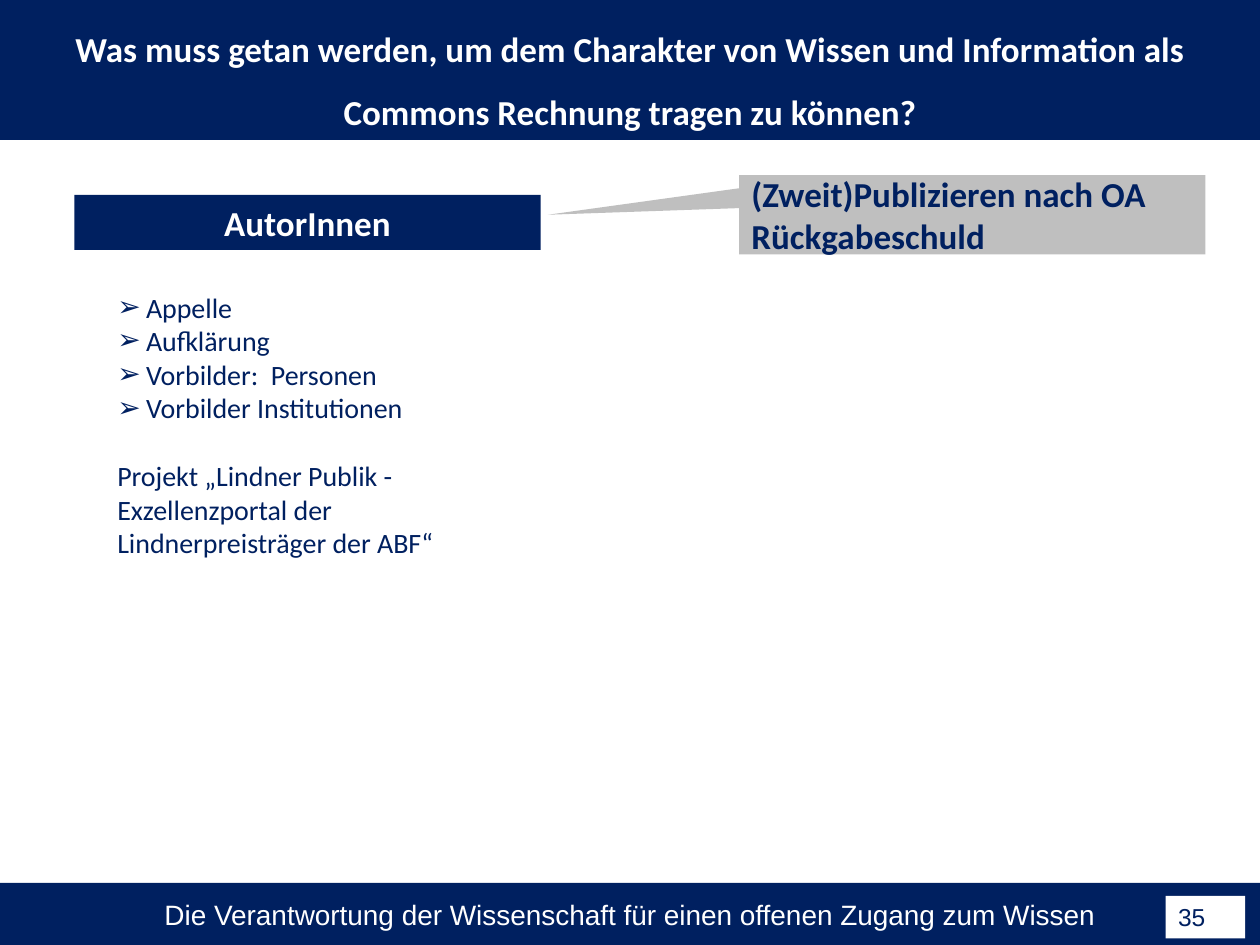
from dataclasses import dataclass

import pptx
import pptx.dml.color
import pptx.enum.shapes
import pptx.enum.text
import pptx.oxml
import pptx.oxml.ns
import pptx.util

Cm, Pt = pptx.util.Cm, pptx.util.Pt
Kind = pptx.enum.shapes.MSO_SHAPE
Align = pptx.enum.text.PP_ALIGN
Anchor = pptx.enum.text.MSO_ANCHOR

NAVY, WHITE, GREY = "002060", "FFFFFF", "BFBFBF"
WIDE, HIGH = 25.4, 19.05


@dataclass
class Style:
    size: int
    color: str
    font: str = "Calibri"
    bold: bool = False


@dataclass
class Box:
    lines: list[str]
    left: float
    top: float
    width: float
    height: float
    fill: str
    style: Style
    align: Align = Align.LEFT
    kind: Kind = Kind.RECTANGLE
    inset: float = 0.25
    tip: tuple[float, ...] = ()


def paint(form, tone: str) -> None:
    """Give a fill or a font one solid colour."""
    color = pptx.dml.color.RGBColor.from_string(tone)
    if hasattr(form, "solid"):
        form.solid()
        form.fore_color.rgb = color
    else:
        form.color.rgb = color


def place(shape, left: float, top: float, width: float, height: float) -> None:
    shape.left, shape.top = Cm(left), Cm(top)
    shape.width, shape.height = Cm(width), Cm(height)


def write(frame, lines: list[str], style: Style, align: Align) -> None:
    """Write one paragraph with one run for each line."""
    frame.word_wrap = True
    frame.auto_size = pptx.enum.text.MSO_AUTO_SIZE.NONE
    for i, line in enumerate(lines):
        para = frame.paragraphs[0] if i == 0 else frame.add_paragraph()
        para.alignment = align
        para.space_before = Pt(0)
        run = para.add_run()
        run.text = line
        run.font.name, run.font.size = style.font, Pt(style.size)
        run.font.bold = style.bold
        paint(run.font, style.color)


def draw(slide, box: Box) -> None:
    shape = slide.shapes.add_shape(box.kind, 0, 0, 0, 0)
    place(shape, box.left, box.top, box.width, box.height)
    shape.shadow.inherit = False
    paint(shape.fill, box.fill)
    shape.line.fill.background()
    for i, value in enumerate(box.tip):
        shape.adjustments[i] = value
    frame = shape.text_frame
    frame.margin_left = frame.margin_right = Cm(box.inset)
    frame.margin_top = frame.margin_bottom = Cm(0)
    frame.vertical_anchor = Anchor.MIDDLE
    write(frame, box.lines, box.style, box.align)


def mark(para, sign: str = "", indent: float = 0) -> None:
    """Set a bullet with a hanging indent, or no bullet at all."""
    props = para._p.get_or_add_pPr()
    props.set("marL", str(Cm(indent)))
    props.set("indent", str(-Cm(indent)))
    names = [("a:buFont", "typeface", "Arial"), ("a:buChar", "char", sign)]
    for tag, key, value in names if sign else [("a:buNone", "", "")]:
        item = pptx.oxml.parse_xml(f"<{tag} {pptx.oxml.ns.nsdecls('a')}/>")
        if key:
            item.set(key, value)
        props.append(item)


def main() -> None:
    deck = pptx.Presentation()
    deck.slide_width, deck.slide_height = Cm(WIDE), Cm(HIGH)
    slide = deck.slides.add_slide(deck.slide_layouts[1])
    head = Style(20, WHITE, bold=True)

    # Title band
    title = slide.shapes.title
    place(title, 0, 0, WIDE, 2.82)
    paint(title.fill, NAVY)
    title.text_frame.vertical_anchor = Anchor.TOP
    write(title.text_frame, [
        "Was muss getan werden, um dem Charakter von Wissen und Information "
        "als Commons Rechnung tragen zu können?"], head, Align.CENTER)
    title.text_frame.paragraphs[0].line_spacing = 1.5

    # List of measures, then the project
    body = slide.placeholders[1]
    place(body, 2.11, 5.72, 7.01, 5.74)
    items = ["Appelle", "Aufklärung", "Vorbilder:  Personen",
             "Vorbilder Institutionen"]
    project = ("Projekt „Lindner Publik - Exzellenzportal der "
               "Lindnerpreisträger der ABF“")
    write(body.text_frame, items + [project], Style(16, NAVY), Align.LEFT)
    *points, last = body.text_frame.paragraphs
    for para in points:
        mark(para, "➢", 0.58)
    last.space_before = Pt(19.5)
    mark(last)

    # Heading, callout, footer and page number
    boxes = [
        Box(["AutorInnen"], 1.5, 3.93, 9.4, 1.11, NAVY, head, Align.CENTER),
        Box(["(Zweit)Publizieren nach OA", "Rückgabeschuld"],
            14.9, 3.53, 9.4, 1.6, GREY, Style(20, NAVY, bold=True),
            kind=Kind.RECTANGULAR_CALLOUT, tip=(-0.91, 0)),
        Box(["Die Verantwortung der Wissenschaft für einen offenen "
             "Zugang zum Wissen"], 0, 17.8, WIDE, HIGH - 17.8, NAVY,
            Style(16, WHITE, "Arial"), Align.CENTER, inset=0),
        Box(["35"], 23.5, 18.06, 1.6, 0.86, WHITE, Style(14, NAVY, "Arial")),
    ]
    for box in boxes:
        draw(slide, box)

    deck.save("out.pptx")


if __name__ == "__main__":
    main()
